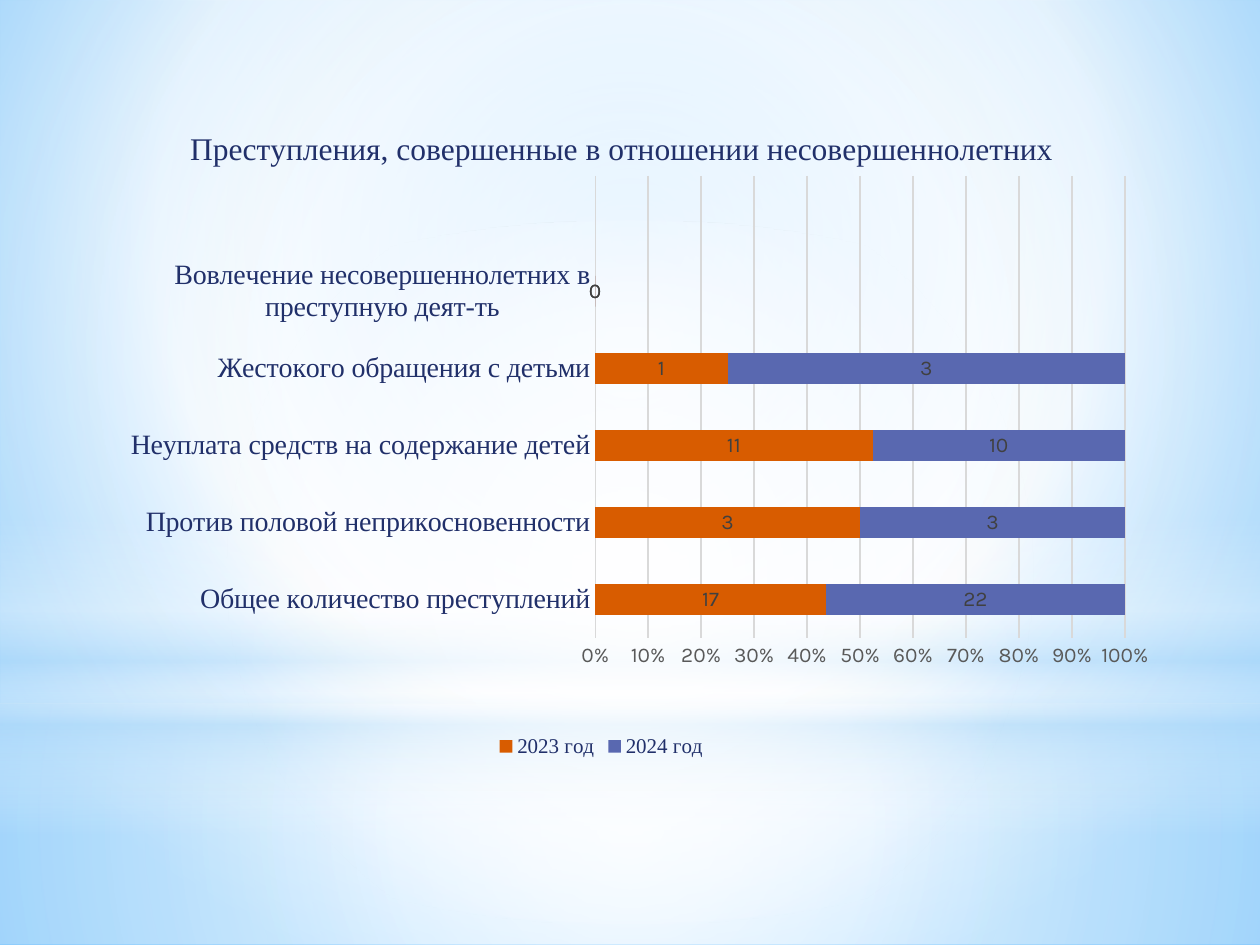
import dataclasses
import typing

import lxml.etree
import pptx
import pptx.chart.data
import pptx.dml.color
import pptx.enum.chart
import pptx.enum.shapes
import pptx.oxml
import pptx.oxml.ns
import pptx.util

Pt = pptx.util.Pt
qn = pptx.oxml.ns.qn
Kind = pptx.enum.shapes.MSO_SHAPE
Enum = pptx.enum.chart


@dataclasses.dataclass(frozen=True)
class Theme:
    serif: str = "Times New Roman"
    sans: str = "Karla"
    navy: str = "21306A"
    black: str = "000000"
    dark: str = "404040"
    grey: str = "595959"
    grid: str = "D9D9D9"
    orange: str = "D85C00"
    violet: str = "5968B0"
    white: str = "FFFFFF"
    pale: str = "B4DCFA"
    light: str = "9ED5FF"
    blue: str = "5BB9FF"
    head: int = 18
    label: int = 16
    small: int = 12
    base: int = 10
    line: float = 0.75


class Stop(typing.NamedTuple):
    place: int
    color: str
    alpha: int = 100


class Glow(typing.NamedTuple):
    """A soft shape; focus is left, top, right, bottom, or None for a vertical blend."""
    kind: typing.Any
    box: tuple
    stops: list
    focus: typing.Optional[tuple] = (50, 50, 50, 50)


class Year(typing.NamedTuple):
    name: str
    counts: tuple
    color: str


T = Theme()
BACK = [Stop(0, T.light), Stop(60, T.white), Stop(100, T.blue)]
GLOWS = [
    Glow(Kind.RECTANGLE, (0, 402, 720, 138),
         [Stop(0, T.white, 91), Stop(37, T.white, 76), Stop(100, T.pale, 79)]),
    Glow(Kind.RECTANGLE, (0, 0, 720, 402),
         [Stop(0, T.white, 89), Stop(48, T.white, 62), Stop(100, T.pale, 79)]),
    Glow(Kind.RECTANGLE, (0, 296.6, 720, 180),
         [Stop(0, T.white, 0), Stop(29, T.white, 30), Stop(45, T.pale, 40),
          Stop(55, T.white, 26), Stop(65, T.pale, 60), Stop(100, T.white, 0)], None),
    Glow(Kind.OVAL, (0, 126, 720, 402), [Stop(0, T.white), Stop(56, T.white, 0)]),
]
CRIMES = [
    "Общее количество преступлений",
    "Против половой неприкосновенности",
    "Неуплата средств на содержание детей",
    "Жестокого обращения с детьми",
    "Вовлечение несовершеннолетних в преступную деят-ть",
    "",
]
YEARS = [
    Year("2023 год", (17, 3, 11, 1, 0, None), T.orange),
    Year("2024 год", (22, 3, 10, 3, 0, None), T.violet),
]
TITLE = "Преступления, совершенные в отношении несовершеннолетних"


def rgb(code: str) -> pptx.dml.color.RGBColor:
    return pptx.dml.color.RGBColor.from_string(code)


def blend(fill, owner, stops: list, focus: typing.Optional[tuple]) -> None:
    """Give fill, which lies within owner, a gradient with alpha."""
    fill.gradient()
    grad = owner.find(".//" + qn("a:gradFill"))
    for child in list(grad):
        grad.remove(child)
    row = lxml.etree.SubElement(grad, qn("a:gsLst"))
    for stop in stops:
        mark = lxml.etree.SubElement(row, qn("a:gs"), pos=str(stop.place * 1000))
        tint = lxml.etree.SubElement(mark, qn("a:srgbClr"), val=stop.color)
        if stop.alpha < 100:
            lxml.etree.SubElement(tint, qn("a:alpha"), val=str(stop.alpha * 1000))
    if focus is None:
        lxml.etree.SubElement(grad, qn("a:lin"), ang="5400000", scaled="0")
    else:
        ring = lxml.etree.SubElement(grad, qn("a:path"), {"path": "circle"})
        sides = {side: str(part * 1000) for side, part in zip("ltrb", focus)}
        lxml.etree.SubElement(ring, qn("a:fillToRect"), sides)


def draw_glow(slide, glow: Glow) -> None:
    shape = slide.shapes.add_shape(glow.kind, *map(Pt, glow.box))
    shape.shadow.inherit = False
    shape.line.fill.background()
    blend(shape.fill, shape.element.spPr, glow.stops, glow.focus)


def style(font, face: str, size: int, color: str) -> None:
    font.name, font.size, font.bold = face, Pt(size), False
    font.color.rgb = rgb(color)


def place(owner, index: int, **parts: float) -> None:
    """Set a manual layout, as shares of the chart, at a child index of owner."""
    for old in owner.findall(qn("c:layout")):
        owner.remove(old)
    frame = owner.makeelement(qn("c:layout"))
    owner.insert(index, frame)
    manual = lxml.etree.SubElement(frame, qn("c:manualLayout"))
    if "w" in parts:
        lxml.etree.SubElement(manual, qn("c:layoutTarget"), val="inner")
    for mode in ("xMode", "yMode"):
        lxml.etree.SubElement(manual, qn("c:" + mode), val="edge")
    for name, share in parts.items():
        lxml.etree.SubElement(manual, qn("c:" + name), val=str(share))


def draw_chart(slide) -> None:
    data = pptx.chart.data.CategoryChartData()
    data.categories = CRIMES
    for year in YEARS:
        data.add_series(year.name, year.counts)
    box = map(Pt, (42.5, 57.6, 629.3, 433.4))
    chart = slide.shapes.add_chart(Enum.XL_CHART_TYPE.BAR_STACKED_100, *box, data).chart
    style(chart.font, T.sans, T.base, T.black)

    chart.has_title = True
    title = chart.chart_title
    title.text_frame.text = TITLE
    style(title.text_frame.paragraphs[0].runs[0].font, T.serif, T.head, T.navy)
    title.include_in_layout = False
    place(title._element, 1, x=0.1, y=0.03)

    chart.has_legend = True
    legend = chart.legend
    legend.position = Enum.XL_LEGEND_POSITION.BOTTOM
    legend.include_in_layout = False
    style(legend.font, T.serif, T.small, T.navy)
    place(legend._element, 1, x=0.38, y=0.83)

    names, scale = chart.category_axis, chart.value_axis
    for axis in (names, scale):
        axis.major_tick_mark = axis.minor_tick_mark = Enum.XL_TICK_MARK.NONE
    style(names.tick_labels.font, T.serif, T.label, T.navy)
    style(scale.tick_labels.font, T.sans, T.small, T.grey)
    scale.tick_labels.number_format = "0%"
    scale.tick_labels.number_format_is_linked = False
    scale.major_unit = 0.1
    scale.has_major_gridlines = True
    for line in (names.format.line, scale.major_gridlines.format.line):
        line.color.rgb = rgb(T.grid)
        line.width = Pt(T.line)
    scale.format.line.fill.background()

    plot = chart.plots[0]
    plot.gap_width, plot.overlap, plot.vary_by_categories = 150, 100, False
    for bars, year in zip(plot.series, YEARS):
        bars.format.fill.solid()
        bars.format.fill.fore_color.rgb = rgb(year.color)
        labels = bars.data_labels
        labels.show_value = True
        labels.position = Enum.XL_LABEL_POSITION.CENTER
        style(labels.font, T.sans, T.small, T.dark)
    area = chart._chartSpace.find(".//" + qn("c:plotArea"))
    place(area, 0, x=0.473, y=0.099, w=0.481, h=0.609)


def main() -> None:
    deck = pptx.Presentation()
    deck.slide_width, deck.slide_height = Pt(720), Pt(540)
    slide = deck.slides.add_slide(deck.slide_layouts[6])
    blend(slide.background.fill, slide.element, BACK, (20, 10, 20, 60))
    for glow in GLOWS:
        draw_glow(slide, glow)
    draw_chart(slide)
    deck.save("out.pptx")


if __name__ == "__main__":
    main()
